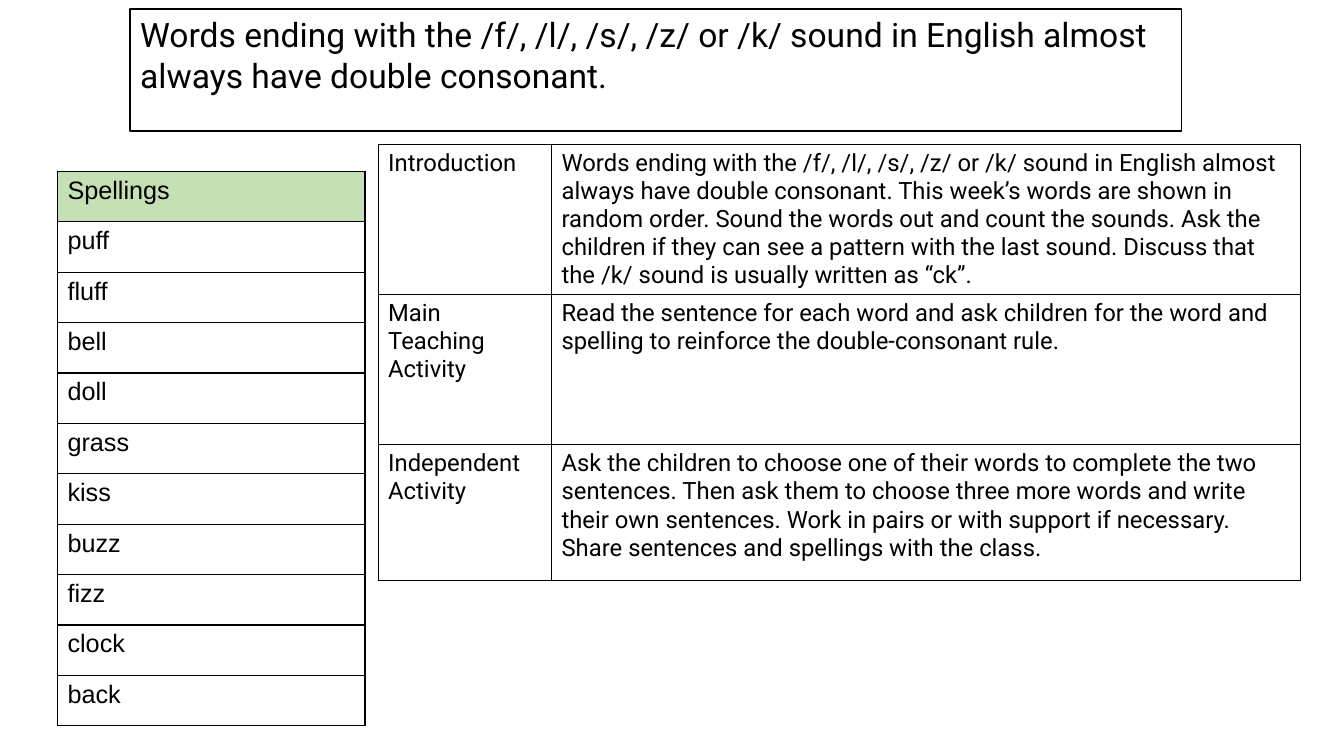
from pptx import Presentation
from pptx.dml.color import RGBColor
from pptx.enum.text import MSO_ANCHOR, MSO_AUTO_SIZE, PP_ALIGN
from pptx.oxml.ns import qn
from pptx.util import Inches, Pt
from lxml.etree import SubElement

COLORS = {"ink": "000000", "paper": "FFFFFF", "header": "C5E0B4"}

RULE = ("Words ending with the /f/, /l/, /s/, /z/ or /k/ sound in English "
        "almost always have double consonant.")

LESSON_PLAN = [
    ["Introduction",
     RULE + " This week’s words are shown in random order. Sound the words out "
     "and count the sounds. Ask the children if they can see a pattern with the "
     "last sound. Discuss that the /k/ sound is usually written as “ck”."],
    ["Main Teaching Activity",
     "Read the sentence for each word and ask children for the word and "
     "spelling to reinforce the double-consonant rule."],
    ["Independent Activity",
     "Ask the children to choose one of their words to complete the two "
     "sentences. Then ask them to choose three more words and write their own "
     "sentences. Work in pairs or with support if necessary. Share sentences "
     "and spellings with the class."],
]

SPELLINGS = ["Spellings", "puff", "fluff", "bell", "doll", "grass",
             "kiss", "buzz", "fizz", "clock", "back"]


def color(name):
    return RGBColor.from_string(COLORS[name])


class LessonSlide:
    """Holds the slide and the style shared by its elements."""

    line_width = Pt(1)

    def __init__(self, slide):
        self.slide = slide

    def add_text(self, text_frame, text, font, size):
        paragraph = text_frame.paragraphs[0]
        paragraph.alignment = PP_ALIGN.LEFT
        run = paragraph.add_run()
        run.text = text
        run.font.name = font
        run.font.size = Pt(size)
        run.font.color.rgb = color("ink")

    def title(self, text, left, top, width, height, font, size):
        shape = self.slide.shapes.title
        shape.left, shape.top = Inches(left), Inches(top)
        shape.width, shape.height = Inches(width), Inches(height)
        shape.fill.solid()
        shape.fill.fore_color.rgb = color("paper")
        shape.line.color.rgb = color("ink")
        shape.line.width = self.line_width
        text_frame = shape.text_frame
        text_frame.word_wrap = True
        text_frame.auto_size = MSO_AUTO_SIZE.NONE
        text_frame.vertical_anchor = MSO_ANCHOR.TOP
        self.add_text(text_frame, text, font, size)

    def border(self, cell):
        properties = cell._tc.get_or_add_tcPr()
        for side in ("a:lnL", "a:lnR", "a:lnT", "a:lnB"):
            line = SubElement(properties, qn(side), w=str(int(self.line_width)))
            fill = SubElement(line, qn("a:solidFill"))
            SubElement(fill, qn("a:srgbClr"), val=COLORS["ink"])

    def table(self, rows, left, top, widths, heights, font, size, header=None):
        frame = self.slide.shapes.add_table(
            len(rows), len(widths), Inches(left), Inches(top),
            Inches(sum(widths)), Inches(sum(heights)))
        table = frame.table
        table.first_row = table.horz_banding = False
        for column, width in zip(table.columns, widths):
            column.width = Inches(width)
        for index, (row, height) in enumerate(zip(table.rows, heights)):
            row.height = Inches(height)
            for cell, text in zip(row.cells, rows[index]):
                self.border(cell)
                if header and index == 0:
                    cell.fill.solid()
                    cell.fill.fore_color.rgb = color(header)
                else:
                    cell.fill.background()
                self.add_text(cell.text_frame, text, font, size)


def main():
    presentation = Presentation()
    presentation.slide_width = Inches(13.33)
    presentation.slide_height = Inches(7.5)
    title_only = presentation.slide_layouts[5]
    lesson = LessonSlide(presentation.slides.add_slide(title_only))

    # Spelling rule
    lesson.title(RULE, 1.29, 0.09, 10.43, 1.21, "Roboto", 24)

    # Lesson plan
    lesson.table(LESSON_PLAN, 3.75, 1.43, [1.72, 7.43], [1.26, 1.49, 1.35],
                 "Roboto", 17)

    # Spelling list
    lesson.table([[word] for word in SPELLINGS], 0.57, 1.7, [3.05],
                 [0.5] * len(SPELLINGS), "Arial", 18, header="header")

    presentation.save("out.pptx")


if __name__ == "__main__":
    main()
